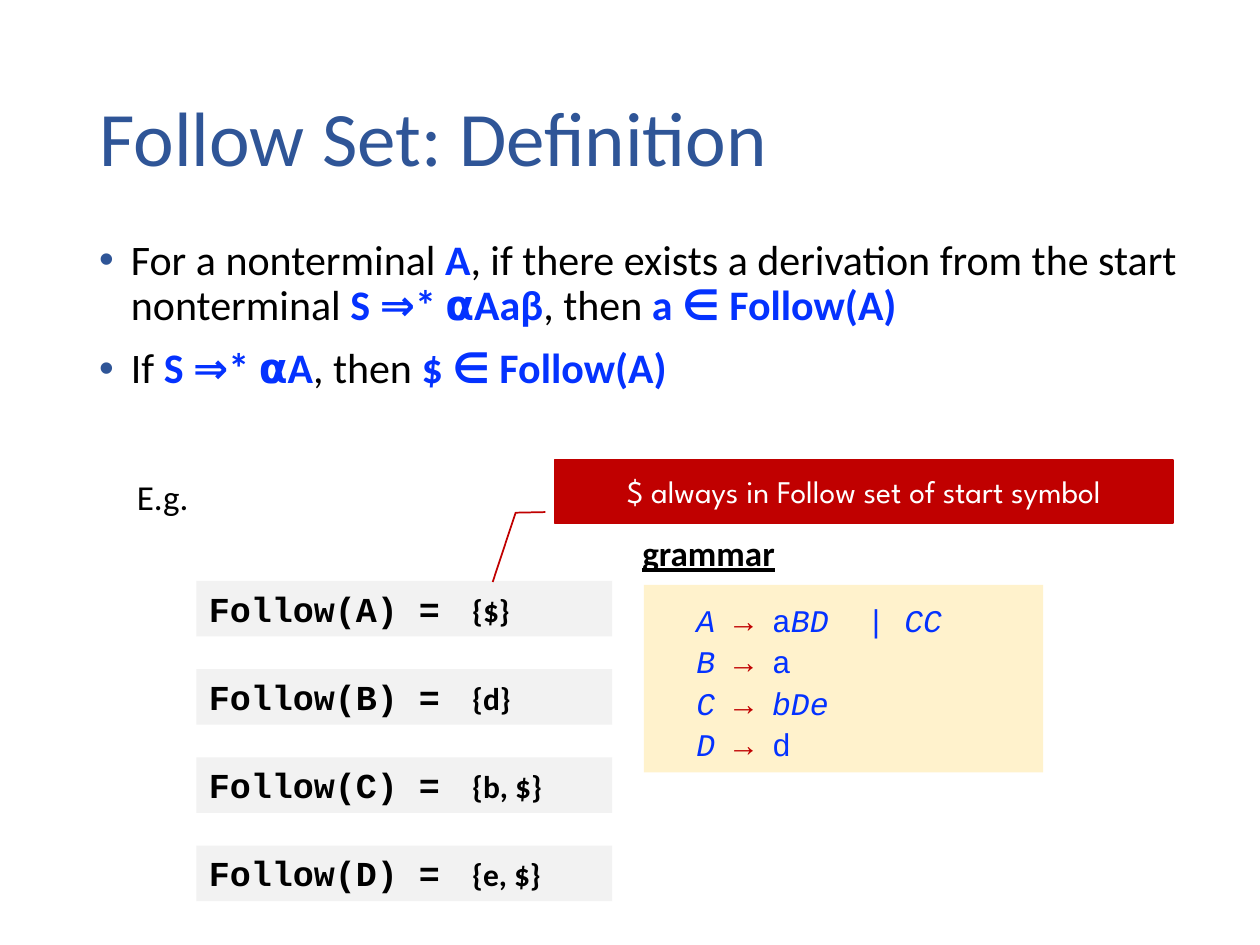
"""Build the slide that defines the Follow set of a grammar."""
from lxml.etree import SubElement
from pptx import Presentation
from pptx.dml.color import RGBColor
from pptx.enum.shapes import MSO_SHAPE as SHAPE
from pptx.enum.text import MSO_ANCHOR as ANCHOR, PP_ALIGN as ALIGN
from pptx.oxml.ns import qn
from pptx.util import Cm, Pt

NAVY = RGBColor(0x2F, 0x55, 0x97)
BLUE = RGBColor(0x04, 0x32, 0xFF)
RED = RGBColor(0xC0, 0x00, 0x00)
GREY = RGBColor(0xF2, 0xF2, 0xF2)
CREAM = RGBColor(0xFF, 0xF2, 0xCC)
BLACK = RGBColor(0x00, 0x00, 0x00)
WHITE = RGBColor(0xFF, 0xFF, 0xFF)
MONO = "Courier New"


def write(p, text, size=20, font="Calibri", color=BLACK, bold=False, italic=False, underline=False):
    r = p.add_run()
    r.text = text
    f = r.font
    f.size, f.name, f.bold, f.italic, f.underline = Pt(size), font, bold, italic, underline
    f.color.rgb = color


def add_box(x, y, w, h, fill=None, shape=SHAPE.RECTANGLE, anchor=ANCHOR.TOP, wrap=True):
    area = Cm(x), Cm(y), Cm(w), Cm(h)
    if fill is None:
        sp = s.shapes.add_textbox(*area)
    else:
        sp = s.shapes.add_shape(shape, *area)
        sp.shadow.inherit = False
        sp.fill.solid()
        sp.fill.fore_color.rgb = fill
        sp.line.fill.background()
    tf = sp.text_frame
    tf.word_wrap, tf.vertical_anchor = wrap, anchor
    tf.paragraphs[0].alignment = ALIGN.LEFT
    return sp


prs = Presentation()
prs.slide_width, prs.slide_height = Cm(25.4), Cm(19.05)
s = prs.slides.add_slide(prs.slide_layouts[6])

p = add_box(1.75, 1.02, 21.9, 3.68, anchor=ANCHOR.MIDDLE).text_frame.paragraphs[0]
p.line_spacing = 0.9
write(p, "Follow Set: Definition", size=44, color=NAVY)

bullets = [
    ["For a nonterminal ", "A", ", if there exists a derivation from the start nonterminal ",
     "S ⇒* ⍺Aaβ", ", then ", "a ∈ Follow(A)"],
    ["If", " S ⇒* ⍺A", ", then ", "$ ∈ Follow(A)"],
]
tf = add_box(1.75, 4.7, 23.65, 3.63).text_frame
for i, parts in enumerate(bullets):
    p = tf.add_paragraph() if i else tf.paragraphs[0]
    p.line_spacing, p.space_before = 0.9, Pt(10)
    pPr = p._p.get_or_add_pPr()
    pPr.set("marL", str(Cm(0.64)))
    pPr.set("indent", str(-Cm(0.64)))
    SubElement(SubElement(pPr, qn("a:buClr")), qn("a:srgbClr")).set("val", str(NAVY))
    SubElement(pPr, qn("a:buFont")).set("typeface", "Arial")
    SubElement(pPr, qn("a:buChar")).set("char", "•")
    for j, text in enumerate(parts):
        formula = j % 2 == 1
        write(p, text, size=24, color=BLUE if formula else BLACK, bold=formula)

p = add_box(2.51, 9.47, 1.55, 1.12, wrap=False).text_frame.paragraphs[0]
write(p, "E.g.")
p = add_box(12.7, 10.59, 3.2, 1.12, wrap=False).text_frame.paragraphs[0]
write(p, "grammar", bold=True, underline=True)

add_box(12.98, 11.79, 8.05, 3.78, CREAM)
rules = [
    ("A", [(" a", False), ("BD  ", True), ("| ", False), ("CC", True)]),
    ("B", [(" a", False)]),
    ("C", [(" bDe", True)]),
    ("D", [(" d", False)]),
]
tf = add_box(13.79, 11.91, 7.24, 3.63).text_frame
for i, (symbol, body) in enumerate(rules):
    p = tf.add_paragraph() if i else tf.paragraphs[0]
    p.line_spacing = 1.1
    write(p, symbol + " ", size=18, font=MONO, color=BLUE, italic=True)
    write(p, "→", size=18, font=MONO, color=RED)
    for text, italic in body:
        write(p, text, size=18, font=MONO, color=BLUE, italic=italic)

follow_sets = [("A", "{$}", 1.3), ("B", "{d}", 1.3), ("C", "{b, $}", 1.93), ("D", "{e, $}", 1.93)]
for i, (symbol, members, width) in enumerate(follow_sets):
    y = 11.71 + 1.78 * i
    p = add_box(3.96, y, 8.38, 1.12, GREY).text_frame.paragraphs[0]
    write(p, f"Follow({symbol}) =", font=MONO, bold=True)
    p = add_box(9.27, y + 0.07, width, 1.02, wrap=False).text_frame.paragraphs[0]
    write(p, members, size=18, bold=True)

sp = add_box(11.18, 9.27, 12.47, 1.27, RED, SHAPE.LINE_CALLOUT_2, ANCHOR.MIDDLE)
for i, value in enumerate([0.83, -0.015, 0.84, -0.063, 1.94, -0.1]):
    sp.adjustments[i] = value
sp.line.color.rgb, sp.line.width = RED, Pt(1)
p = sp.text_frame.paragraphs[0]
p.alignment = ALIGN.CENTER
write(p, "$ always in Follow set of start symbol", size=18, font="League Spartan", color=WHITE)

prs.save("out.pptx")
